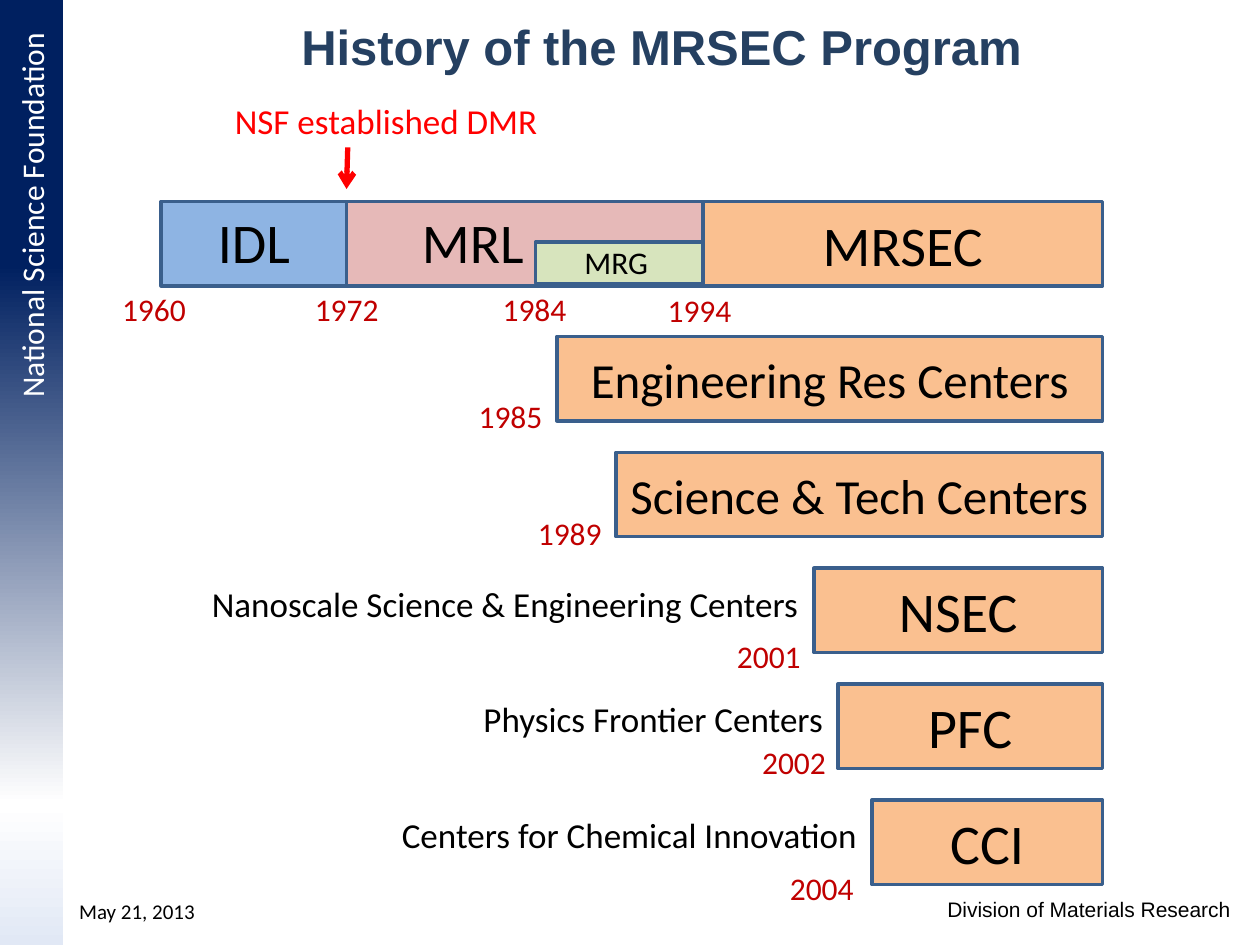
"""Build the slide on the history of the MRSEC program."""
from copy import deepcopy

from pptx import Presentation
from pptx.dml.color import RGBColor
from pptx.enum.shapes import MSO_CONNECTOR as Conn, MSO_SHAPE as Form
from pptx.enum.text import MSO_ANCHOR as Anchor, PP_ALIGN as Align
from pptx.oxml.ns import qn
from pptx.oxml.xmlchemy import OxmlElement as Node
from pptx.util import Inches, Pt

HUES = {
    "navy": "002060", "white": "FFFFFF", "pale": "E1E8F5", "title": "254061",
    "blue": "8EB4E3", "pink": "E6B9B8", "green": "D7E4BD", "peach": "FAC090",
    "edge": "3A5F8C", "black": "000000", "year": "C00000", "red": "FF0000",
}
FADE = [(0.28, "navy"), (0.85, "white"), (1, "pale")]
EDGE, BAR, TALL, STEP = 8.75, 1.6, 0.67, 0.92
BLOCKS = [
    (1.28, BAR, 1.47, TALL, "blue"),
    (2.75, BAR, 2.83, TALL, "pink"),
    (4.25, 1.92, 1.34, 0.33, "green"),
]
NAMES = [
    ("IDL", 1.63, BAR, 0.78, 0.64, 32),
    ("MRL", 3.25, BAR, 1.02, 0.64, 32),
    ("MRG", 4.54, 1.88, 0.71, 0.4, 18),
]
ROWS = [
    (4.42, "Engineering Res Centers", 28),
    (4.89, "Science & Tech Centers", 28),
    (6.46, "NSEC", 32),
    (6.65, "PFC", 32),
    (6.92, "CCI", 32),
]
NOTES = [
    (2, "Nanoscale Science & Engineering Centers", 4.9),
    (3, "Physics Frontier Centers", 2.93),
    (4, "Centers for Chemical Innovation", 3.85),
]
YEARS = [
    ("1960", 0.87, 2.25), ("1972", 2.4, 2.25), ("1984", 3.89, 2.25),
    ("1994", 5.2, 2.26), ("1985", 3.7, 3.1), ("1989", 4.17, 4.03),
    ("2001", 5.75, 5.01), ("2002", 5.95, 5.85), ("2004", 6.17, 6.85),
]


def tint(name):
    return RGBColor.from_string(HUES[name])


def apply(item, vals):
    for key, val in vals.items():
        setattr(item, key, val)


class Deck:
    """Hold the style and the current slide."""

    def __init__(self):
        self.prs = Presentation()
        apply(self.prs, {"slide_width": Inches(10), "slide_height": Inches(7.5)})
        self.slide = self.prs.slides.add_slide(self.prs.slide_layouts[5])
        self.shapes = self.slide.shapes

    def words(self, frame, text, size, hue="black", align=Align.CENTER,
              face="Calibri", bold=False):
        para = frame.paragraphs[0]
        para.text = text
        para.alignment = align
        font = para.runs[0].font
        apply(font, {"name": face, "size": Pt(size), "bold": bold})
        font.color.rgb = tint(hue)

    def title(self, text, *box):
        item = self.shapes.title
        apply(item, dict(zip(("left", "top", "width", "height"), map(Inches, box))))
        apply(item.text_frame, {"vertical_anchor": Anchor.TOP, "word_wrap": True})
        self.words(item.text_frame, text, 28, "title", face="Arial", bold=True)

    def rect(self, *box):
        item = self.shapes.add_shape(Form.RECTANGLE, *map(Inches, box))
        item.shadow.inherit = False
        return item

    def block(self, x, y, w, h, hue, text="", size=32):
        item = self.rect(x, y, w, h)
        item.fill.solid()
        item.fill.fore_color.rgb = tint(hue)
        item.line.color.rgb = tint("edge")
        item.line.width = Pt(2)
        if text:
            apply(item.text_frame, {"margin_left": 0, "margin_right": 0,
                                    "word_wrap": True,
                                    "vertical_anchor": Anchor.MIDDLE})
            self.words(item.text_frame, text, size)

    def fade(self, x, y, w, h, stops):
        item = self.rect(x, y, w, h)
        item.line.fill.background()
        item.fill.gradient()
        item.fill.gradient_angle = 270
        base = next(item._element.iter(qn("a:gs")))
        base.addnext(deepcopy(base))
        for stop, (place, hue) in zip(item.fill.gradient_stops, stops):
            stop.color.rgb = tint(hue)
            stop.position = place

    def label(self, text, x, y, w, h, size, hue="black", align=Align.LEFT,
              face="Calibri", turn=None):
        frame = self.shapes.add_textbox(*map(Inches, (x, y, w, h))).text_frame
        frame.word_wrap = False
        if turn:
            frame.vertical_anchor = Anchor.MIDDLE
            frame._txBody.bodyPr.set("vert", turn)
        self.words(frame, text, size, hue, align, face)

    def arrow(self, *ends):
        item = self.shapes.add_connector(Conn.STRAIGHT, *map(Inches, ends))
        item.line.color.rgb = tint("red")
        item.line.width = Pt(3)
        tip = Node("a:tailEnd")
        tip.set("type", "arrow")
        item.line._get_or_add_ln().append(tip)
        item._element.spPr.append(Node("a:effectLst"))


def main():
    deck = Deck()
    deck.fade(0, 0, 0.5, 7.5, FADE)
    deck.label("National Science Foundation", 0, 0.06, 0.5, 3.3, 18, "white",
               Align.CENTER, turn="vert270")
    deck.label("Division of Materials Research", 7.42, 7.07, 2.47, 0.3, 12,
               face="Arial")
    deck.label("May 21, 2013", 0.53, 7.08, 1.13, 0.3, 12)
    deck.title("History of the MRSEC Program", 0.75, 0.08, 9, 1.25)
    for block in BLOCKS:
        deck.block(*block)
    deck.block(5.58, BAR, EDGE - 5.58, TALL, "peach", "MRSEC")
    tops = [2.67 + STEP * i for i in range(len(ROWS))]
    for (x, text, size), y in zip(ROWS, tops):
        deck.block(x, y, EDGE - x, TALL, "peach", text, size)
    for row, text, wide in NOTES:
        deck.label(text, ROWS[row][0] - wide, tops[row] + 0.06, wide, 0.44, 20,
                   align=Align.CENTER)
    for name in NAMES:
        deck.label(*name)
    for year, x, y in YEARS:
        deck.label(year, x, y, 0.71, 0.4, 18, "year")
    deck.label("NSF established DMR", 1.75, 0.74, 2.63, 0.44, 20, "red",
               Align.CENTER)
    deck.arrow(2.76, 1.17, 2.75, 1.5)
    deck.prs.save("out.pptx")


if __name__ == "__main__":
    main()
